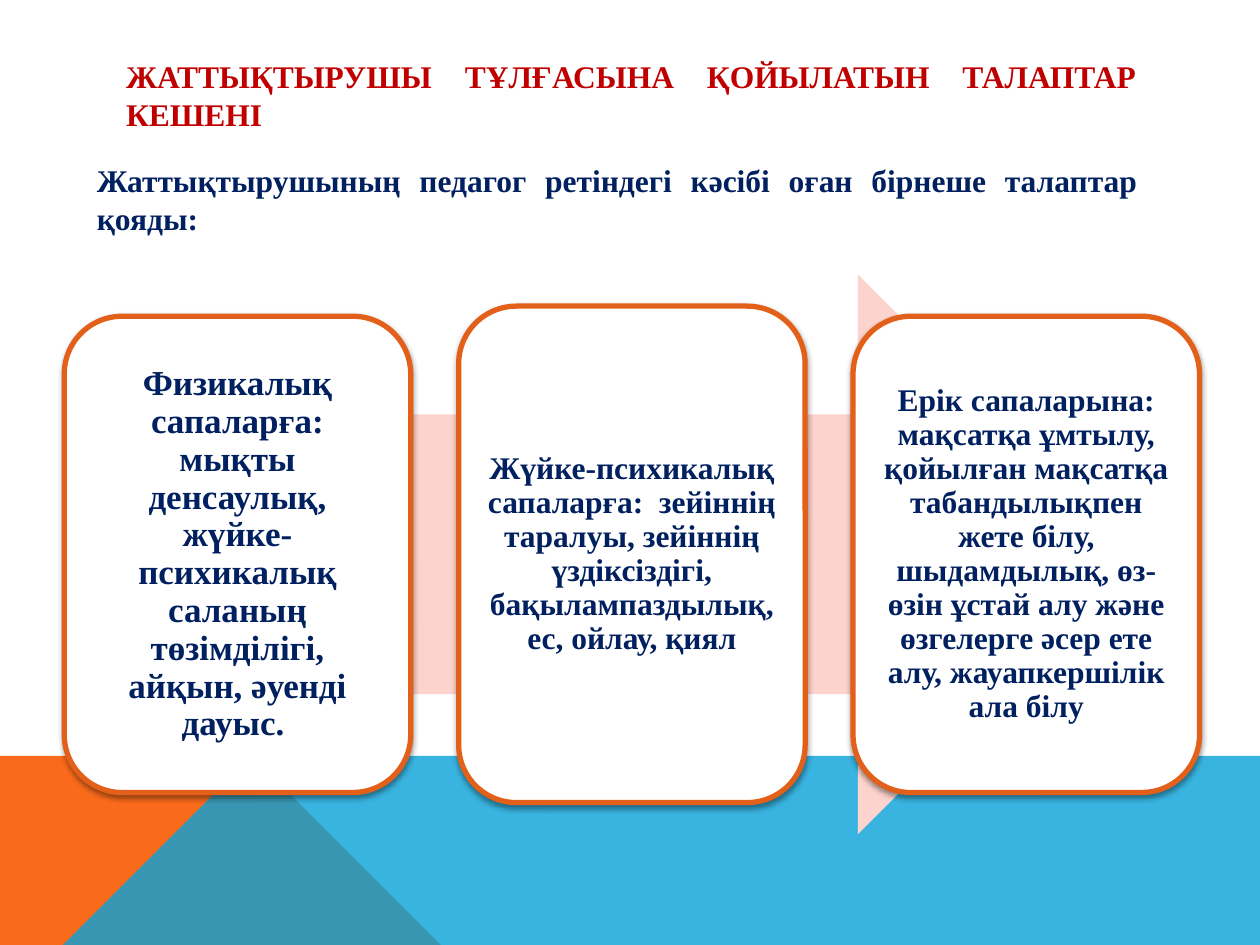
from lxml import etree
from pptx import Presentation
from pptx import util as u
from pptx.dml.color import RGBColor
from pptx.enum import shapes, text
from pptx.oxml import parse_xml
from pptx.oxml.ns import nsdecls, qn

WHITE = RGBColor(0xFF, 0xFF, 0xFF)
RED = RGBColor(0xC0, 0x00, 0x00)
NAVY = RGBColor(0x00, 0x20, 0x60)
ORANGE = RGBColor(0xF9, 0x6A, 0x1B)
BLUE = RGBColor(0x08, 0xA1, 0xD9)
PINK = RGBColor(0xFD, 0xD4, 0xCD)
RUST = RGBColor(0xE2, 0x60, 0x19)

WIDTH, HEIGHT = 10, 7.5
BAND_TOP, PEAK = 5.52, 2.23
CARD_LEFT, CARD_STEP, CARD_WIDTH, CARD_MIDDLE = 0.51, 3.13, 2.75, 4.4
FONT = "Times New Roman"

TITLE = "ЖАТТЫҚТЫРУШЫ ТҰЛҒАСЫНА ҚОЙЫЛАТЫН ТАЛАПТАР КЕШЕНІ"
INTRO = "Жаттықтырушының педагог ретіндегі кәсібі оған бірнеше талаптар қояды:"
CARDS = [
    ("Физикалық сапаларға: мықты денсаулық, жүйке-психикалық саланың "
     "төзімділігі, айқын, әуенді дауыс. ", 3.78, 20, 0.08),
    ("Жүйке-психикалық сапаларға:  зейіннің таралуы, зейіннің үздіксіздігі, "
     "бақылампаздылық, ес, ойлау, қиял", 3.94, 18, 0.07),
    ("Ерік сапаларына: мақсатқа ұмтылу, қойылған мақсатқа табандылықпен жете "
     "білу, шыдамдылық, өз-өзін ұстай алу және өзгелерге әсер ете алу, "
     "жауапкершілік ала білу", 3.78, 18, 0.07),
]


def box(left, top, width, height):
    return [u.Inches(v) for v in (left, top, width, height)]


def write(tf, words, size, color, align, anchor):
    tf.text = words
    tf.word_wrap = True
    tf.auto_size = text.MSO_AUTO_SIZE.NONE
    tf.vertical_anchor = anchor
    p = tf.paragraphs[0]
    p.alignment = align
    font = p.runs[0].font
    font.name, font.size, font.bold = FONT, u.Pt(size), True
    font.color.rgb = color
    return p


def paint(sp, color):
    sp.shadow.inherit = False
    sp.fill.solid()
    sp.fill.fore_color.rgb = color
    sp.line.fill.background()


def add_polygon(s, points, color, opacity=100):
    builder = s.shapes.build_freeform(*points[0], scale=u.Inches(1))
    builder.add_line_segments(points[1:], close=True)
    sp = builder.convert_to_shape()
    paint(sp, color)
    if opacity < 100:
        rgb = sp.fill._xPr.find(qn("a:solidFill"))[0]
        etree.SubElement(rgb, qn("a:alpha")).set("val", str(opacity * 1000))


def add_soft_shadow(sp):
    effects = sp._element.spPr.find(qn("a:effectLst"))
    effects.append(parse_xml(
        f'<a:outerShdw {nsdecls("a")} blurRad="{u.Pt(3.1)}" dist="{u.Pt(1.6)}" '
        'dir="5400000" rotWithShape="0"><a:srgbClr val="000000">'
        '<a:alpha val="38000"/></a:srgbClr></a:outerShdw>'))


def add_card(s, column, words, height, size, inset):
    sp = s.shapes.add_shape(
        shapes.MSO_SHAPE.ROUNDED_RECTANGLE,
        *box(CARD_LEFT + column * CARD_STEP, CARD_MIDDLE - height / 2,
             CARD_WIDTH, height))
    paint(sp, WHITE)
    sp.line.color.rgb = RUST
    sp.line.width = u.Pt(3)
    add_soft_shadow(sp)
    tf = sp.text_frame
    p = write(tf, words, size, NAVY, text.PP_ALIGN.CENTER,
              text.MSO_ANCHOR.MIDDLE)
    p.line_spacing = 0.9
    tf.margin_left = tf.margin_right = u.Inches(inset)
    tf.margin_top = tf.margin_bottom = u.Inches(inset)


def add_heading(s):
    title = s.shapes.title
    title.left, title.top, title.width, title.height = box(0.9, 0.4, 8.22, 0.6)
    intro = s.shapes.add_textbox(*box(0.67, 1.23, 8.46, 0.71))
    for sp, words, color in ((title, TITLE, RED), (intro, INTRO, NAVY)):
        write(sp.text_frame, words, 18, color, text.PP_ALIGN.JUSTIFY,
              text.MSO_ANCHOR.TOP)


def main():
    prs = Presentation()
    prs.slide_width, prs.slide_height = u.Inches(WIDTH), u.Inches(HEIGHT)
    s = prs.slides.add_slide(prs.slide_layouts[5])
    add_polygon(s, [(0, HEIGHT), (0, BAND_TOP), (PEAK, BAND_TOP),
                    (3.91, HEIGHT)], ORANGE)
    add_polygon(s, [(0, HEIGHT), (PEAK, BAND_TOP), (WIDTH, BAND_TOP),
                    (WIDTH, HEIGHT)], BLUE, 80)
    add_heading(s)
    arrow = s.shapes.add_shape(shapes.MSO_SHAPE.RIGHT_ARROW,
                               *box(1, 2.18, 8.03, 4.44))
    paint(arrow, PINK)
    for column, card in enumerate(CARDS):
        add_card(s, column, *card)
    prs.save("out.pptx")


if __name__ == "__main__":
    main()
